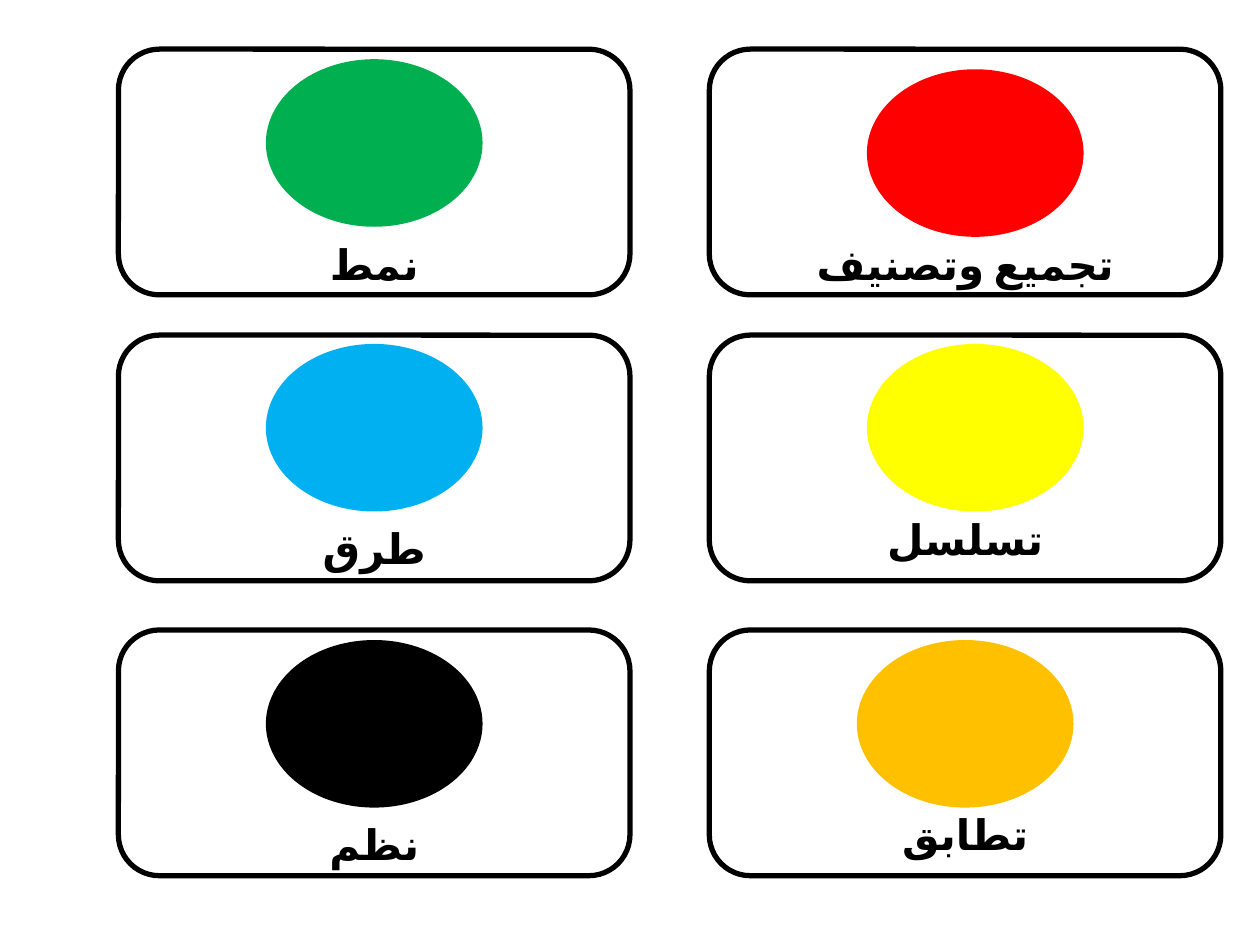
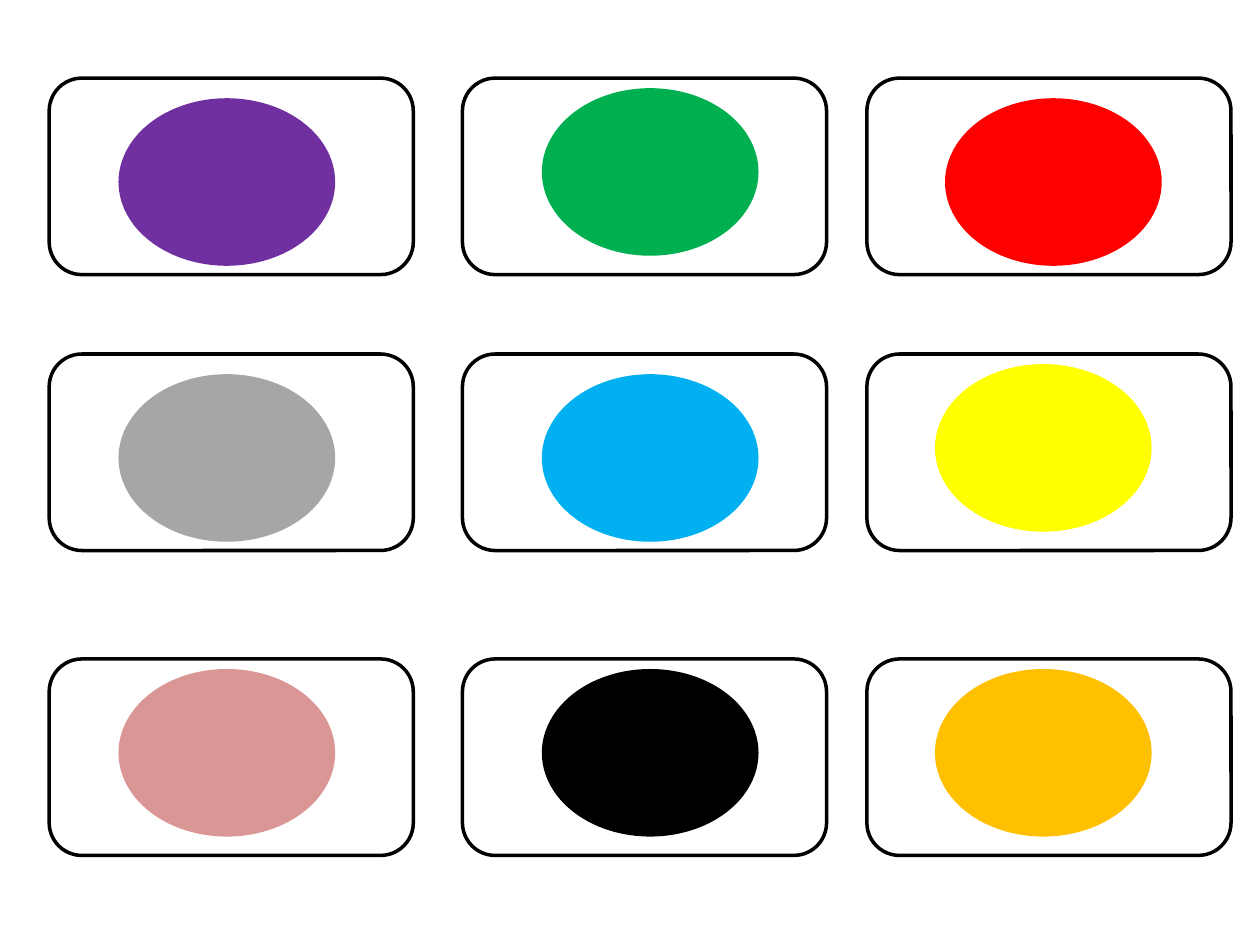
"""Build two sheets of colour cards, one labelled in Arabic and one plain."""
import dataclasses

import lxml.etree
import pptx
import pptx.dml.color
import pptx.enum.lang
import pptx.enum.shapes
import pptx.enum.text
import pptx.oxml.ns
import pptx.util

Inches = pptx.util.Inches
Shape = pptx.enum.shapes.MSO_SHAPE


@dataclasses.dataclass(frozen=True)
class Theme:
    """Colours, type and sizes that both sheets share."""
    ink: str = "000000"
    red: str = "FF0000"
    yellow: str = "FFFF00"
    orange: str = "FFC000"
    green: str = "00B050"
    blue: str = "00B0F0"
    purple: str = "7030A0"
    grey: str = "A6A6A6"
    pink: str = "D99694"
    font: str = "Calibri"
    size: int = 24
    dot: tuple = (1.72, 1.33)
    label: tuple = (4.22, 0.5)


THEME = Theme()

LARGE = (4.06, 1.95)
LARGE_COLS = (5.63, 0.94)
LARGE_ROWS = (0.39, 2.66, 5)
# column, row, word, label top, colour, dot left, dot top
LABELLED = (
    (0, 0, "تجميع وتصنيف", 1.84, THEME.red, 6.88, 0.55),
    (0, 1, "تسلسل", 4.03, THEME.yellow, 6.88, 2.73),
    (0, 2, "تطابق", 6.37, THEME.orange, 6.8, 5.08),
    (1, 0, "نمط", 1.84, THEME.green, 2.11, 0.47),
    (1, 1, "طرق", 4.1, THEME.blue, 2.11, 2.73),
    (1, 2, "نظم", 6.45, THEME.ink, 2.11, 5.08),
)

SMALL = (2.89, 1.56)
SMALL_COLS = (0.39, 6.88, 3.67)
SMALL_ROWS = (0.62, 2.81, 5.23)
PLAIN = (
    (THEME.red, 7.5, 0.78),
    (THEME.yellow, 7.42, 2.89),
    (THEME.orange, 7.42, 5.31),
    (THEME.green, 4.3, 0.7),
    (THEME.blue, 4.3, 2.97),
    (THEME.ink, 4.3, 5.31),
    (THEME.purple, 0.94, 0.78),
    (THEME.grey, 0.94, 2.97),
    (THEME.pink, 0.94, 5.31),
)


def paint(color):
    """Turn a hex string into a colour."""
    return pptx.dml.color.RGBColor.from_string(color)


def place(left, top, size):
    """Turn a corner and a size in inches into lengths."""
    return [Inches(value) for value in (left, top, *size)]


def add_frame(slide, left, top, size, weight):
    """Add the hollow rounded outline of a card."""
    frame = slide.shapes.add_shape(Shape.ROUNDED_RECTANGLE, *place(left, top, size))
    frame.shadow.inherit = False
    frame.fill.background()
    frame.line.color.rgb = paint(THEME.ink)
    frame.line.width = pptx.util.Pt(weight)


def add_dot(slide, color, left, top):
    """Add the filled oval of a card."""
    dot = slide.shapes.add_shape(Shape.FLOWCHART_CONNECTOR, *place(left, top, THEME.dot))
    dot.shadow.inherit = False
    dot.fill.solid()
    dot.fill.fore_color.rgb = paint(color)
    dot.line.fill.background()


def style_run(run):
    """Set the type of an Arabic run, its complex script included."""
    font = run.font
    font.name = THEME.font
    font.size = pptx.util.Pt(THEME.size)
    font.bold = True
    font.color.rgb = paint(THEME.ink)
    font.language_id = pptx.enum.lang.MSO_LANGUAGE_ID.ARABIC
    script = lxml.etree.SubElement(run._r.get_or_add_rPr(), pptx.oxml.ns.qn("a:cs"))
    script.set("typeface", THEME.font)


def add_label(slide, word, left, top):
    """Add a centred right-to-left word."""
    frame = slide.shapes.add_textbox(*place(left, top, THEME.label)).text_frame
    frame.word_wrap = True
    frame.auto_size = pptx.enum.text.MSO_AUTO_SIZE.SHAPE_TO_FIT_TEXT
    frame.text = word
    line = frame.paragraphs[0]
    line.alignment = pptx.enum.text.PP_ALIGN.CENTER
    line._p.get_or_add_pPr().set("rtl", "1")
    style_run(line.runs[0])


def add_words(slide):
    """Fill the sheet of labelled cards."""
    inset = (THEME.label[0] - LARGE[0]) / 2
    for col, row, word, base, *_ in LABELLED:
        left = LARGE_COLS[col]
        add_frame(slide, left, LARGE_ROWS[row], LARGE, 3)
        add_label(slide, word, left - inset, base)
    for *_, color, left, top in LABELLED:
        add_dot(slide, color, left, top)


def add_plain(slide):
    """Fill the sheet of plain cards."""
    for color, left, top in PLAIN:
        add_dot(slide, color, left, top)
    for left in SMALL_COLS:
        for top in SMALL_ROWS:
            add_frame(slide, left, top, SMALL, 2)


def main():
    """Build and save the deck."""
    deck = pptx.Presentation()
    deck.slide_width, deck.slide_height = Inches(10), Inches(7.5)
    blank = deck.slide_layouts.get_by_name("Blank")
    for fill in (add_words, add_plain):
        fill(deck.slides.add_slide(blank))
    deck.save("out.pptx")


if __name__ == "__main__":
    main()
